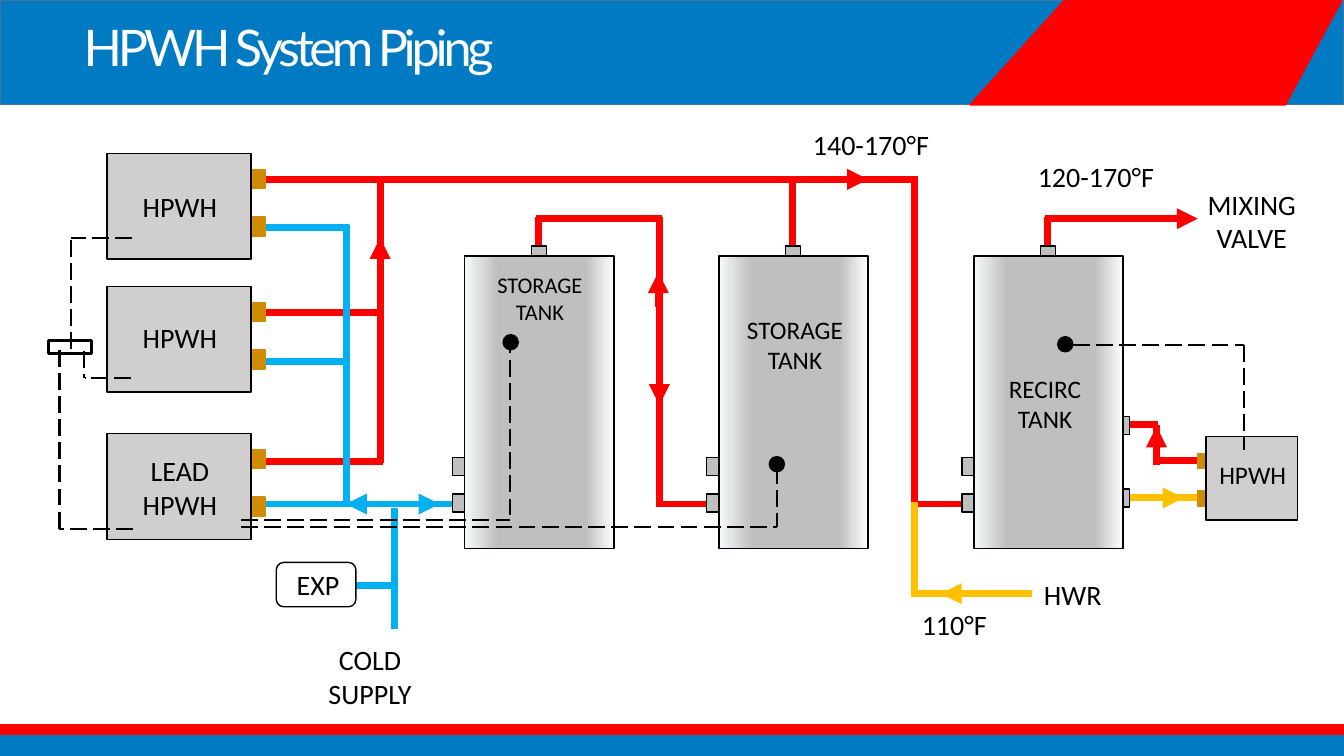
from lxml import etree
from pptx import Presentation
from pptx.dml.color import RGBColor
from pptx.enum.dml import MSO_LINE
from pptx.enum.shapes import MSO_CONNECTOR, MSO_SHAPE
from pptx.enum.text import MSO_ANCHOR, MSO_AUTO_SIZE, PP_ALIGN
from pptx.oxml.ns import qn
from pptx.util import Inches, Pt

RECTANGLE = MSO_SHAPE.RECTANGLE
ROUNDED = MSO_SHAPE.ROUNDED_RECTANGLE
OVAL = MSO_SHAPE.OVAL
STRAIGHT = MSO_CONNECTOR.STRAIGHT
LONG_DASH = MSO_LINE.LONG_DASH

BLACK = RGBColor(0x00, 0x00, 0x00)
WHITE = RGBColor(0xFF, 0xFF, 0xFF)
BANNER_BLUE = RGBColor(0x00, 0x7A, 0xC3)
BANNER_EDGE = RGBColor(0x43, 0x73, 0x9E)
HOT = RGBColor(0xFF, 0x00, 0x00)
COLD = RGBColor(0x00, 0xB0, 0xF0)
RETURN = RGBColor(0xFF, 0xC0, 0x00)
BRASS = RGBColor(0xCF, 0x8B, 0x03)
HEATER_GREY = RGBColor(0xD0, 0xCE, 0xCE)
TANK_GREY = RGBColor(0xBF, 0xBF, 0xBF)
TANK_STOPS = [(0, "F5FBFC"), (22, "BFBFBF"), (81, "BFBFBF"), (100, "FFFFFF")]

# Pipe runs: x and y of the start, x and y of the end
HOT_PIPES = [
    (2.49, 1.78, 3.79, 1.78), (2.48, 3.1, 3.78, 3.1), (2.16, 4.58, 3.8, 4.58),
    (3.77, 4.59, 3.77, 1.75), (7.14, 1.78, 9.1, 1.78), (7.86, 2.44, 7.86, 1.77),
    (9.07, 5.15, 9.07, 1.77), (9.54, 5, 9.04, 5),
    (5.34, 2.43, 5.34, 2.15), (6.57, 2.17, 5.32, 2.17),
    (6.54, 5.03, 6.54, 2.15), (7.03, 5, 6.53, 5), (10.39, 2.43, 10.39, 2.15),
    (11.49, 4.21, 10.89, 4.21), (11.47, 4.61, 11.47, 4.22), (11.47, 4.57, 11.88, 4.57),
]
COLD_PIPES = [
    (2.63, 2.26, 3.46, 2.26), (2.62, 3.59, 3.46, 3.59), (2.62, 5, 4.61, 5),
    (3.44, 2.23, 3.44, 5), (3.91, 5.04, 3.91, 6.24), (3.38, 5.81, 3.9, 5.81),
]
RETURN_PIPES = [
    (11.88, 4.94, 11.03, 4.94), (9.07, 5.9, 9.07, 4.98), (9.95, 5.89, 9.04, 5.89),
]

# Flow arrows: the arrowhead is at the end point
HOT_FLOWS = [
    (3.74, 1.78, 8.61, 1.78), (10.36, 2.17, 11.88, 2.17), (11.47, 4.58, 11.47, 4.23),
    (3.77, 2.71, 3.77, 2.36), (6.53, 3.05, 6.53, 2.7), (6.54, 3.68, 6.54, 4.02),
]
COLD_FLOWS = [(3.81, 5, 3.43, 5), (3.98, 5, 4.36, 5)]
RETURN_FLOWS = [(10.24, 5.89, 9.33, 5.89), (11.38, 4.94, 11.74, 4.94)]

SENSOR_WIRES = [
    (10.64, 3.42, 12.34, 3.42), (12.34, 3.42, 12.34, 4.46),
    (2.39, 5.23, 7.71, 5.23), (7.71, 4.63, 7.71, 5.23),
    (5.06, 3.34, 5.06, 5.16), (2.39, 5.16, 5.06, 5.16),
    (0.59, 3.47, 0.59, 5.25), (1.32, 5.25, 0.59, 5.25),
    (0.7, 2.38, 0.7, 3.46), (1.31, 2.36, 0.7, 2.36),
    (1.3, 3.75, 0.84, 3.75), (0.83, 3.48, 0.83, 3.75),
]
SENSORS = [(4.99, 3.32), (7.63, 4.53), (10.49, 3.34)]

# Labels: lines, left, top, width, height, size
LABELS = [
    (["HPWH"], 1.31, 1.83, 0.95, 0.44, 20),
    (["HPWH"], 1.31, 3.13, 0.95, 0.44, 20),
    (["LEAD", "HPWH"], 1.31, 4.45, 0.95, 0.77, 20),
    (["HPWH"], 11.99, 4.51, 0.87, 0.4, 18),
    (["STORAGE", "TANK"], 4.82, 2.64, 1.07, 0.64, 16),
    (["STORAGE", "TANK"], 7.3, 3.07, 1.17, 0.71, 18),
    (["RECIRC", "TANK"], 9.9, 3.65, 0.93, 0.71, 18),
    (["140-170°F"], 7.96, 1.22, 1.36, 0.44, 20),
    (["120-170°F"], 10.19, 1.53, 1.36, 0.44, 20),
    (["110°F"], 9.04, 5.98, 0.85, 0.44, 20),
    (["MIXING", "VALVE"], 11.87, 1.81, 1.09, 0.77, 20),
    (["HWR"], 10.25, 5.68, 0.78, 0.44, 20),
    (["COLD", "SUPPLY"], 3.14, 6.33, 1.06, 0.77, 20),
    (["EXP"], 2.84, 5.58, 0.63, 0.44, 20),
]


def style_shape(shape, fill, line, width=1):
    shape.shadow.inherit = False
    if fill is None:
        shape.fill.background()
    else:
        shape.fill.solid()
        shape.fill.fore_color.rgb = fill
    shape.line.color.rgb = line
    shape.line.width = Pt(width)


def add_box(slide, left, top, width, height, fill, line=BLACK, kind=RECTANGLE, weight=1):
    shape = slide.shapes.add_shape(
        kind, Inches(left), Inches(top), Inches(width), Inches(height))
    style_shape(shape, fill, line, weight)
    return shape


def add_lines(slide, runs, color, width=5, dashed=False, arrow=False):
    for run in runs:
        connector = slide.shapes.add_connector(STRAIGHT, *map(Inches, run))
        connector.line.color.rgb = color
        connector.line.width = Pt(width)
        if dashed:
            connector.line.dash_style = LONG_DASH
        properties = connector.element.spPr
        if arrow:
            etree.SubElement(properties.find(qn("a:ln")), qn("a:tailEnd"), type="triangle")
        etree.SubElement(properties, qn("a:effectLst"))


def add_tank(slide, left):
    add_box(slide, left + 0.66, 2.44, 0.15, 0.2, TANK_GREY)
    for top in (4.54, 4.9):
        add_box(slide, left - 0.12, top, 0.25, 0.18, TANK_GREY)
    tank = add_box(slide, left, 2.54, 1.48, 2.9, TANK_GREY)
    tank.fill.gradient()
    tank.fill.gradient_angle = 0
    stops = tank.element.spPr.find(qn("a:gradFill")).find(qn("a:gsLst"))
    for stop in list(stops):
        stops.remove(stop)
    for percent, color in TANK_STOPS:
        stop = etree.SubElement(stops, qn("a:gs"), pos=str(percent * 1000))
        etree.SubElement(stop, qn("a:srgbClr"), val=color)


def add_heater(slide, top):
    for offset in (0.16, 0.63):
        add_box(slide, 2.39, top + offset, 0.24, 0.19, BRASS, BRASS)
    add_box(slide, 1.06, top, 1.43, 1.05, HEATER_GREY)


def add_label(slide, lines, left, top, width, height, size):
    box = slide.shapes.add_textbox(
        Inches(left), Inches(top), Inches(width), Inches(height))
    frame = box.text_frame
    frame.word_wrap = False
    frame.auto_size = MSO_AUTO_SIZE.SHAPE_TO_FIT_TEXT
    frame.text = "\n".join(lines)
    for paragraph in frame.paragraphs:
        paragraph.alignment = PP_ALIGN.CENTER
        paragraph.font.name = "Calibri"
        paragraph.font.size = Pt(size)
        paragraph.font.color.rgb = BLACK


def add_banner(slide):
    add_box(slide, 0, 0, 13.33, 1.04, BANNER_BLUE, BANNER_EDGE)
    builder = slide.shapes.build_freeform(Inches(13.31), Inches(0))
    corners = [(12.75, 1.04), (9.62, 1.04), (10.56, 0)]
    builder.add_line_segments([(Inches(x), Inches(y)) for x, y in corners], close=True)
    style_shape(builder.convert_to_shape(), HOT, HOT)
    add_box(slide, 0, 7.28, 13.33, 0.22, BANNER_BLUE, BANNER_BLUE)
    add_box(slide, 0, 7.19, 13.33, 0.09, HOT, HOT)


def set_title(slide, text):
    title = slide.shapes.title
    title.left, title.top = Inches(0.73), Inches(0.18)
    title.width, title.height = Inches(9.15), Inches(0.79)
    frame = title.text_frame
    frame.text = text
    frame.vertical_anchor = MSO_ANCHOR.TOP
    paragraph = frame.paragraphs[0]
    paragraph.alignment = PP_ALIGN.LEFT
    paragraph.line_spacing = 0.9
    run = paragraph.runs[0]
    run.font.name = "Lato"
    run.font.size = Pt(36)
    run.font.color.rgb = WHITE
    run.font._element.set("spc", "-300")
    # Bring the title in front of the banner
    title.element.getparent().append(title.element)


def main():
    presentation = Presentation()
    presentation.slide_width = Inches(13.33)
    presentation.slide_height = Inches(7.5)
    slide = presentation.slides.add_slide(presentation.slide_layouts[5])
    add_banner(slide)
    set_title(slide, "HPWH System Piping")

    # Pipes
    add_lines(slide, HOT_PIPES, HOT)
    add_lines(slide, COLD_PIPES, COLD)
    add_lines(slide, RETURN_PIPES, RETURN)

    # Tanks, with the two side nozzles of the recirculation tank
    for top in (4.13, 4.85):
        add_box(slide, 10.95, top, 0.25, 0.18, TANK_GREY)
    for left in (4.61, 7.13, 9.66):
        add_tank(slide, left)

    # Heaters
    for top in (1.52, 2.84, 4.3):
        add_heater(slide, top)
    for top in (4.5, 4.87):
        add_box(slide, 11.88, top, 0.15, 0.15, BRASS, BRASS)
    add_box(slide, 11.96, 4.33, 0.91, 0.83, HEATER_GREY)

    # Expansion tank
    add_box(slide, 2.74, 5.58, 0.79, 0.44, WHITE, kind=ROUNDED)

    # Flow directions
    add_lines(slide, HOT_FLOWS, HOT, arrow=True)
    add_lines(slide, COLD_FLOWS, COLD, arrow=True)
    add_lines(slide, RETURN_FLOWS, RETURN, arrow=True)

    # Sensors, their wires and the junction box
    for left, top in SENSORS:
        add_box(slide, left, top, 0.15, 0.15, BLACK, kind=OVAL)
    add_lines(slide, SENSOR_WIRES, BLACK, width=1.5, dashed=True)
    add_box(slide, 0.48, 3.38, 0.43, 0.13, None, weight=2.25)

    for label in LABELS:
        add_label(slide, *label)
    presentation.save("out.pptx")


if __name__ == "__main__":
    main()
